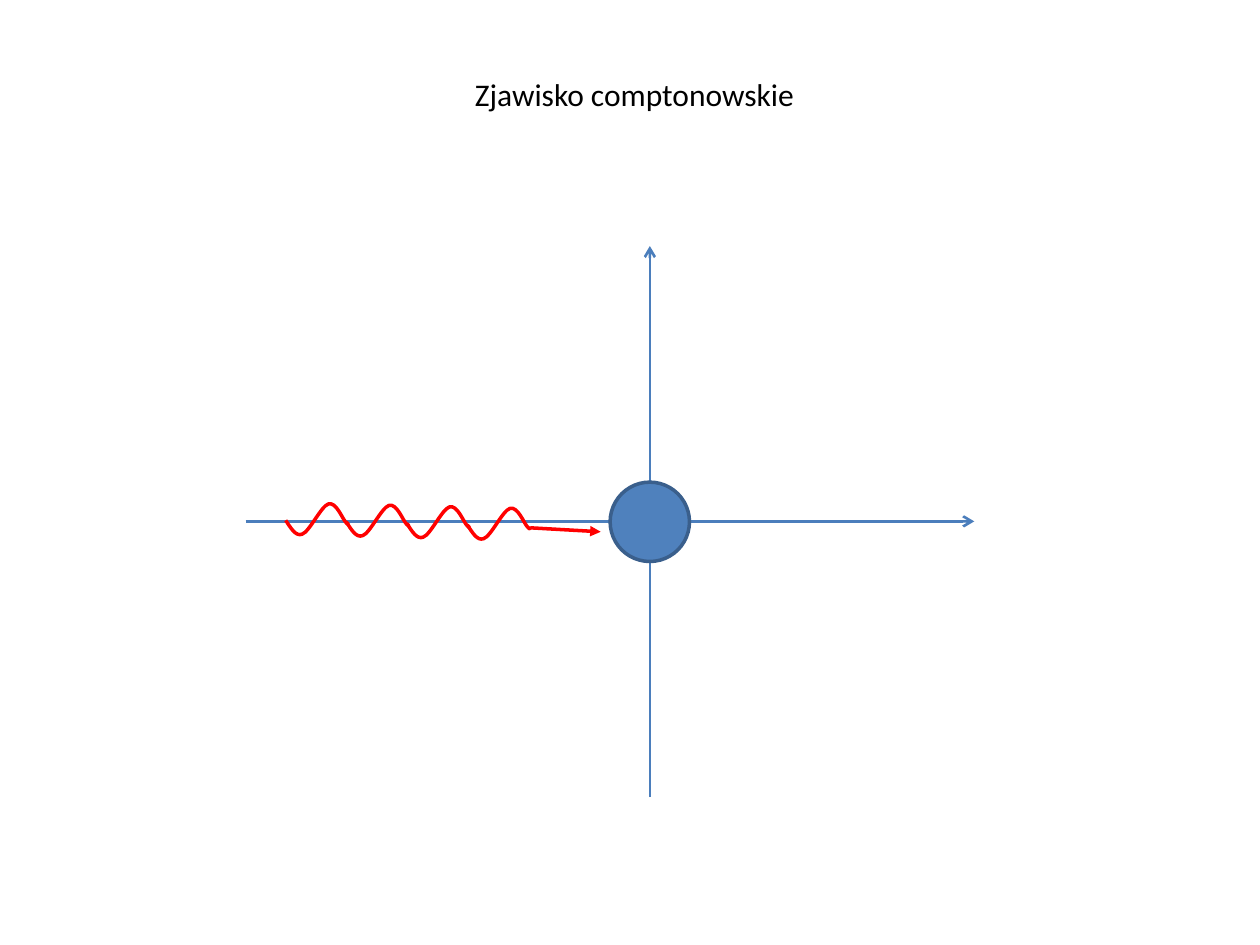
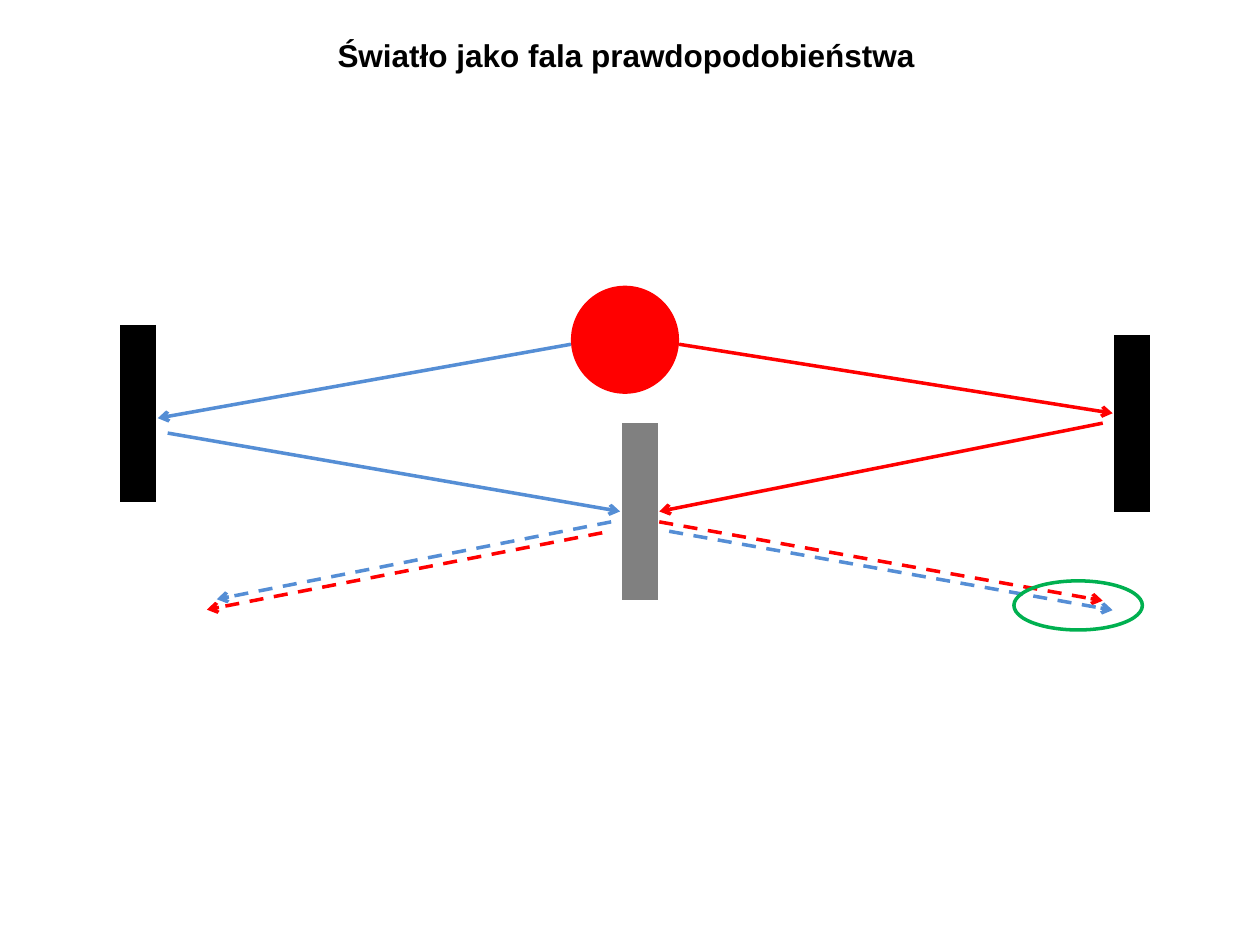
from pptx import Presentation
from pptx.dml.color import RGBColor
from pptx.enum import dml, shapes, text
from pptx.oxml import ns, xmlchemy as xc
from pptx.util import Cm, Pt

COLORS = {
    "black": "000000", "axis": "4B7EBC", "electron": "4F81BD",
    "electron edge": "3A5F8C", "red": "FF0000", "blue": "558ED5",
    "gray": "808080", "green": "00B050",
}
MIRROR_WIDTH = 20.75
TITLE_ONLY = 5

# One wave period: start, then three points per cubic curve (cm)
WAVE = [(0, 0), (.1, .15), (.2, .33), (.33, .28), (.48, .23), (.71, -.28),
        (.86, -.33), (1.02, -.38), (1.14, -.03), (1.22, .05),
        (1.27, .1), (1.27, .08), (1.24, .05)]


class Deck:
    def __init__(self):
        self.prs = Presentation()
        self.prs.slide_width, self.prs.slide_height = Cm(25.4), Cm(19.05)

    def color(self, name):
        return RGBColor.from_string(COLORS[name])

    def slide(self, title, box, font, bold=False):
        self.s = self.prs.slides.add_slide(self.prs.slide_layouts[TITLE_ONLY])
        self.shapes = self.s.shapes
        sp = self.s.shapes.title
        sp.left, sp.top, sp.width, sp.height = map(Cm, box)
        tf = sp.text_frame
        tf.text = title
        tf.word_wrap = True
        tf.auto_size = text.MSO_AUTO_SIZE.NONE
        tf.vertical_anchor = text.MSO_ANCHOR.MIDDLE
        p = tf.paragraphs[0]
        p.alignment = text.PP_ALIGN.LEFT
        p.font.name, p.font.size, p.font.bold = font, Pt(18), bold
        p.font.color.rgb = self.color("black")

    def begin_group(self):
        self.shapes = self.s.shapes.add_group_shape().shapes

    def end_group(self):
        self.shapes = self.s.shapes

    def outline(self, sp, color, width):
        sp.line.color.rgb = self.color(color)
        sp.line.width = Pt(width)

    def line(self, start, end, color, width=2, arrow=None, dashed=False):
        sp = self.shapes.add_connector(
            shapes.MSO_CONNECTOR.STRAIGHT, *map(Cm, start + end))
        self.outline(sp, color, width)
        if dashed:
            sp.line.dash_style = dml.MSO_LINE.DASH
        ln = sp.line._get_or_add_ln()
        if arrow:
            tail = xc.OxmlElement("a:tailEnd")
            tail.set("type", arrow)
            ln.append(tail)
        ln.addnext(xc.OxmlElement("a:effectLst"))

    def ellipse(self, box, fill=None, edge=None):
        sp = self.shapes.add_shape(shapes.MSO_SHAPE.OVAL, *map(Cm, box))
        sp.shadow.inherit = False
        if fill:
            sp.fill.solid()
            sp.fill.fore_color.rgb = self.color(fill)
        else:
            sp.fill.background()
        if edge:
            self.outline(sp, edge, 2)
        else:
            sp.line.fill.background()

    def wave(self, x, y, color):
        """Draw one wave period, turning each three segments into a curve."""
        points = [(Cm(x + dx), Cm(y + dy)) for dx, dy in WAVE]
        builder = self.shapes.build_freeform(*points[0])
        builder.add_line_segments(points[1:], close=False)
        sp = builder.convert_to_shape()
        segments = list(sp._element.iter(ns.qn("a:lnTo")))
        for i in range(0, len(segments), 3):
            curve = xc.OxmlElement("a:cubicBezTo")
            segments[i].addprevious(curve)
            for segment in segments[i:i + 3]:
                curve.append(segment[0])
                segment.getparent().remove(segment)
        sp.shadow.inherit = False
        sp.fill.background()
        self.outline(sp, color, 2)


def compton_slide(deck):
    deck.slide("Zjawisko comptonowskie", (9.32, 1.38, 7.01, 1.02), "Calibri")
    deck.line((13.1, 16.07), (13.1, 4.96), "axis", 1.5, "arrow")
    deck.line((4.95, 10.51), (19.64, 10.51), "axis", 1.5, "arrow")
    deck.begin_group()
    for i in range(4):
        deck.wave(5.76 + 1.22 * i, 10.49 + .03 * i, "red")
    deck.line((10.69, 10.64), (12.11, 10.72), "red", arrow="triangle")
    deck.end_group()
    deck.ellipse((12.3, 9.72, 1.6, 1.6), "electron", "electron edge")


def probability_slide(deck):
    deck.slide("Światło jako fala prawdopodobieństwa",
               (6.55, .6, 12.9, 1.02), "Arial", bold=True)
    deck.ellipse((11.51, 5.76, 2.18, 2.18), "red")
    for x, top, color in ((2.78, 6.55, "black"), (22.82, 6.75, "black"),
                          (12.9, 8.53, "gray")):
        deck.line((x, top), (x, top + 3.57), color, MIRROR_WIDTH)
    rays = [
        ((11.51, 6.94), (3.18, 8.43), "blue", False),
        ((13.69, 6.94), (22.43, 8.33), "red", False),
        ((3.38, 8.73), (12.5, 10.31), "blue", False),
        ((22.23, 8.53), (13.29, 10.31), "red", False),
        ((13.29, 10.52), (22.23, 12.11), "red", True),
        ((12.14, 10.74), (4.17, 12.29), "red", True),
        ((13.49, 10.71), (22.43, 12.3), "blue", True),
        ((12.32, 10.52), (4.37, 12.08), "blue", True),
    ]
    for start, end, color, dashed in rays:
        deck.line(start, end, color, arrow="arrow", dashed=dashed)
    deck.ellipse((20.44, 11.71, 2.59, .99), edge="green")


def main():
    deck = Deck()
    compton_slide(deck)
    probability_slide(deck)
    deck.prs.save("out.pptx")


if __name__ == "__main__":
    main()
